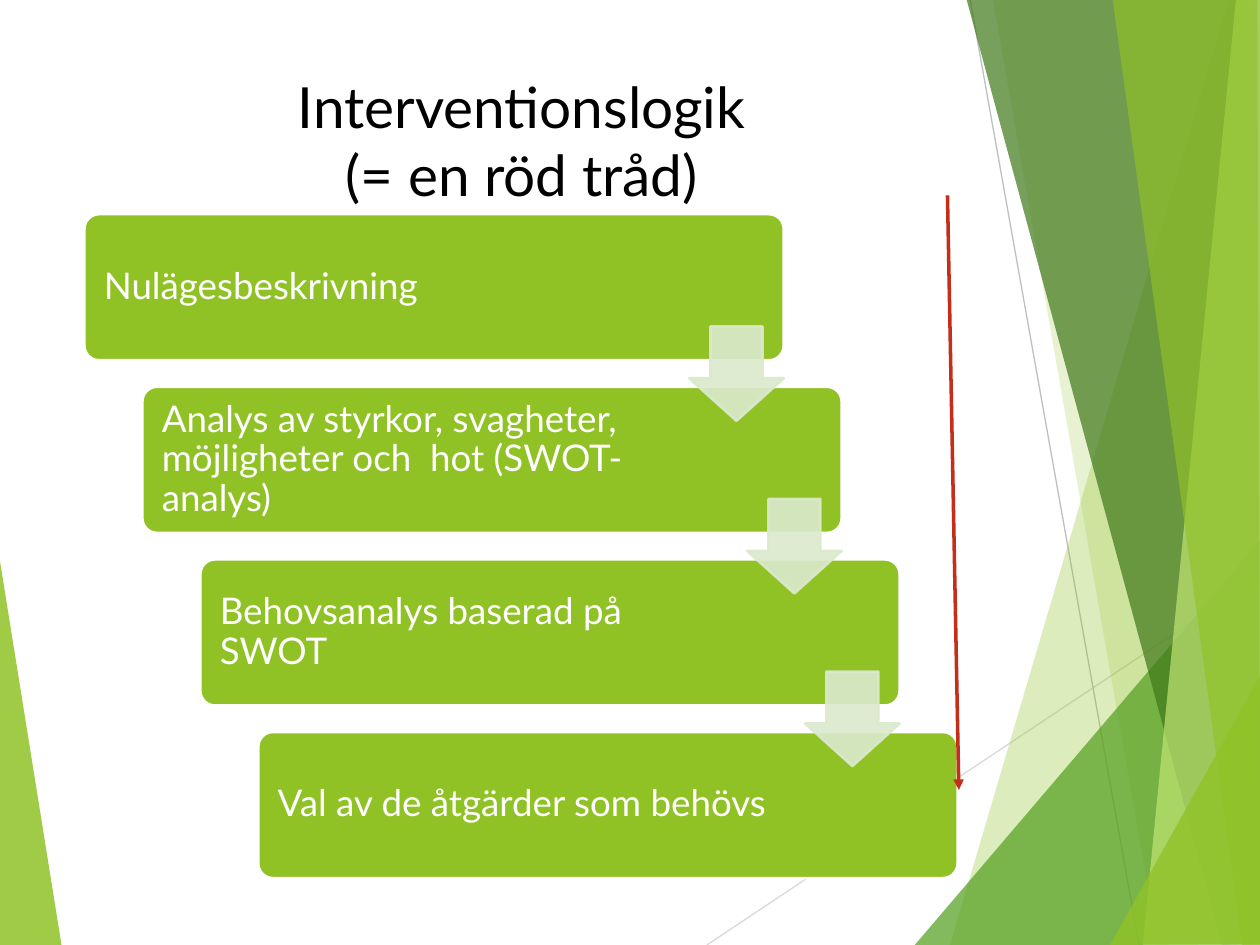
from dataclasses import dataclass

from lxml.etree import SubElement
from pptx import Presentation
from pptx.dml.color import RGBColor
from pptx.enum.shapes import MSO_CONNECTOR, MSO_SHAPE
from pptx.enum.text import MSO_ANCHOR, MSO_AUTO_SIZE, PP_ALIGN
from pptx.oxml.ns import qn
from pptx.util import Inches, Pt


@dataclass(frozen=True)
class Theme:
    font: str = "Lato"
    title_size: float = 32.4
    body_size: float = 21
    black: str = "000000"
    white: str = "FFFFFF"
    green: str = "90C226"
    leaf: str = "54A021"
    forest: str = "3F7819"
    lime: str = "C0E474"
    pale: str = "DBE9CD"
    red: str = "C42F1A"
    light_gray: str = "D9D9D9"
    mid_gray: str = "BFBFBF"


@dataclass(frozen=True)
class Facet:
    points: tuple
    color: str
    alpha: int


@dataclass(frozen=True)
class Line:
    start: tuple
    end: tuple
    color: str
    width: float
    arrow: bool = False


T = Theme()
GUIDES = (
    Line((5.61, 7.5), (10.01, 4.57), T.light_gray, 0.75),
    Line((7.7, 0), (9.04, 7.5), T.mid_gray, 0.75),
)
LEFT_FACET = Facet(((-0.01, 4.39), (0.49, 7.51), (-0.01, 7.5)), T.green, 85)
RIGHT_FACETS = (
    Facet(((9.75, 0), (7.54, 7.5), (10.02, 7.51), (10.01, 0.01)), T.green, 30),
    Facet(((7.88, -0.01), (9.19, 7.5), (10.01, 7.5), (10.01, -0.01)), T.green, 20),
    Facet(((7.26, 7.5), (10, 4.29), (10.01, 7.5)), T.leaf, 72),
    Facet(((7.67, -0.01), (9.7, 7.5), (10.01, 7.49), (10.01, -0.01)), T.forest, 70),
    Facet(((9.81, -0.01), (9.07, 7.5), (10.01, 7.5), (10, -0.01)), T.lime, 70),
    Facet(((8.83, -0.01), (9.86, 7.5), (10, 7.5), (9.98, -0.01)), T.green, 65),
    Facet(((8.81, 7.5), (10.01, 5.35), (10.01, 7.49)), T.green, 80),
)
TITLE = ("Interventionslogik", "(= en röd tråd)")
STEPS = (
    "Nulägesbeskrivning",
    "Analys av styrkor, svagheter, möjligheter och  hot (SWOT-analys)",
    "Behovsanalys baserad på SWOT",
    "Val av de åtgärder som behövs",
)
STEP_DX, STEP_DY = 0.46, 1.37
RED_THREAD = Line((7.52, 1.55), (7.61, 6.27), T.red, 2, arrow=True)


def set_alpha(fill_format, alpha: int) -> None:
    """Make a solid fill, of a shape or of a line, partly transparent."""
    color = fill_format._xPr.find(qn("a:solidFill"))[0]
    SubElement(color, qn("a:alpha")).set("val", str(alpha * 1000))


def add_run(p, text: str, size: float, color: str) -> None:
    """Append one formatted run to a paragraph."""
    r = p.add_run()
    r.text = text
    r.font.name = T.font
    r.font.size = Pt(size)
    r.font.color.rgb = RGBColor.from_string(color)


def paint(sp, color: str, alpha: int = 100) -> None:
    """Give a shape a flat fill without shadow."""
    sp.shadow.inherit = False
    sp.fill.solid()
    sp.fill.fore_color.rgb = RGBColor.from_string(color)
    if alpha < 100:
        set_alpha(sp.fill, alpha)


def outline(sp, color: str, width: float) -> None:
    """Set the line colour and width of a shape or connector."""
    sp.line.color.rgb = RGBColor.from_string(color)
    sp.line.width = Pt(width)


def add_facet(s, facet: Facet) -> None:
    """Draw one translucent background polygon."""
    points = [(Inches(x), Inches(y)) for x, y in facet.points]
    fb = s.shapes.build_freeform(*points[0])
    fb.add_line_segments(points[1:], close=True)
    sp = fb.convert_to_shape()
    paint(sp, facet.color, facet.alpha)
    sp.line.fill.background()


def add_line(s, line: Line) -> None:
    """Draw a straight connector, with an arrowhead if asked for."""
    ends = [Inches(v) for v in line.start + line.end]
    sp = s.shapes.add_connector(MSO_CONNECTOR.STRAIGHT, *ends)
    outline(sp, line.color, line.width)
    if line.arrow:
        SubElement(sp.line._get_or_add_ln(), qn("a:tailEnd")).set("type", "triangle")
    SubElement(sp._element.spPr, qn("a:effectLst"))


def add_title(s) -> None:
    """Fill and place the title placeholder."""
    sp = s.shapes.title
    sp.left, sp.top, sp.width, sp.height = map(Inches, (0.67, 0.52, 6.94, 1.26))
    tf = sp.text_frame
    tf.auto_size = MSO_AUTO_SIZE.NONE
    tf.vertical_anchor = MSO_ANCHOR.TOP
    p = tf.paragraphs[0]
    p.alignment = PP_ALIGN.CENTER
    add_run(p, TITLE[0], T.title_size, T.black)
    p.add_line_break()
    add_run(p, TITLE[1], T.title_size, T.black)


def add_step(s, index: int, text: str) -> None:
    """Draw one box of the staircase with its text."""
    box = (0.67 + index * STEP_DX, 1.7 + index * STEP_DY, 5.55, 1.16)
    sp = s.shapes.add_shape(MSO_SHAPE.ROUNDED_RECTANGLE, *map(Inches, box))
    sp.adjustments[0] = 0.1
    paint(sp, T.green)
    outline(sp, T.white, 1.5)
    tf = sp.text_frame
    tf.word_wrap = True
    tf.vertical_anchor = MSO_ANCHOR.MIDDLE
    tf.margin_left, tf.margin_right = Inches(0.12), Inches(1.33)
    tf.margin_top = tf.margin_bottom = Inches(0.09)
    p = tf.paragraphs[0]
    p.alignment = PP_ALIGN.LEFT
    p.line_spacing = 0.9
    add_run(p, text, T.body_size, T.white)


def add_step_arrow(s, index: int) -> None:
    """Draw the arrow leading from one step to the next."""
    box = (5.47 + index * STEP_DX, 2.59 + index * STEP_DY, 0.75, 0.75)
    sp = s.shapes.add_shape(MSO_SHAPE.DOWN_ARROW, *map(Inches, box))
    sp.adjustments[0], sp.adjustments[1] = 0.55, 0.45
    paint(sp, T.pale, 90)
    outline(sp, T.pale, 1.5)
    set_alpha(sp.line.fill, 90)


def main() -> None:
    """Build the slide and save it."""
    prs = Presentation()
    prs.slide_width, prs.slide_height = Inches(10), Inches(7.5)
    s = prs.slides.add_slide(prs.slide_layouts[5])
    add_facet(s, LEFT_FACET)
    for guide in GUIDES:
        add_line(s, guide)
    for facet in RIGHT_FACETS:
        add_facet(s, facet)
    add_title(s)
    for i, text in enumerate(STEPS):
        add_step(s, i, text)
    for i in range(len(STEPS) - 1):
        add_step_arrow(s, i)
    add_line(s, RED_THREAD)
    prs.save("out.pptx")


if __name__ == "__main__":
    main()
